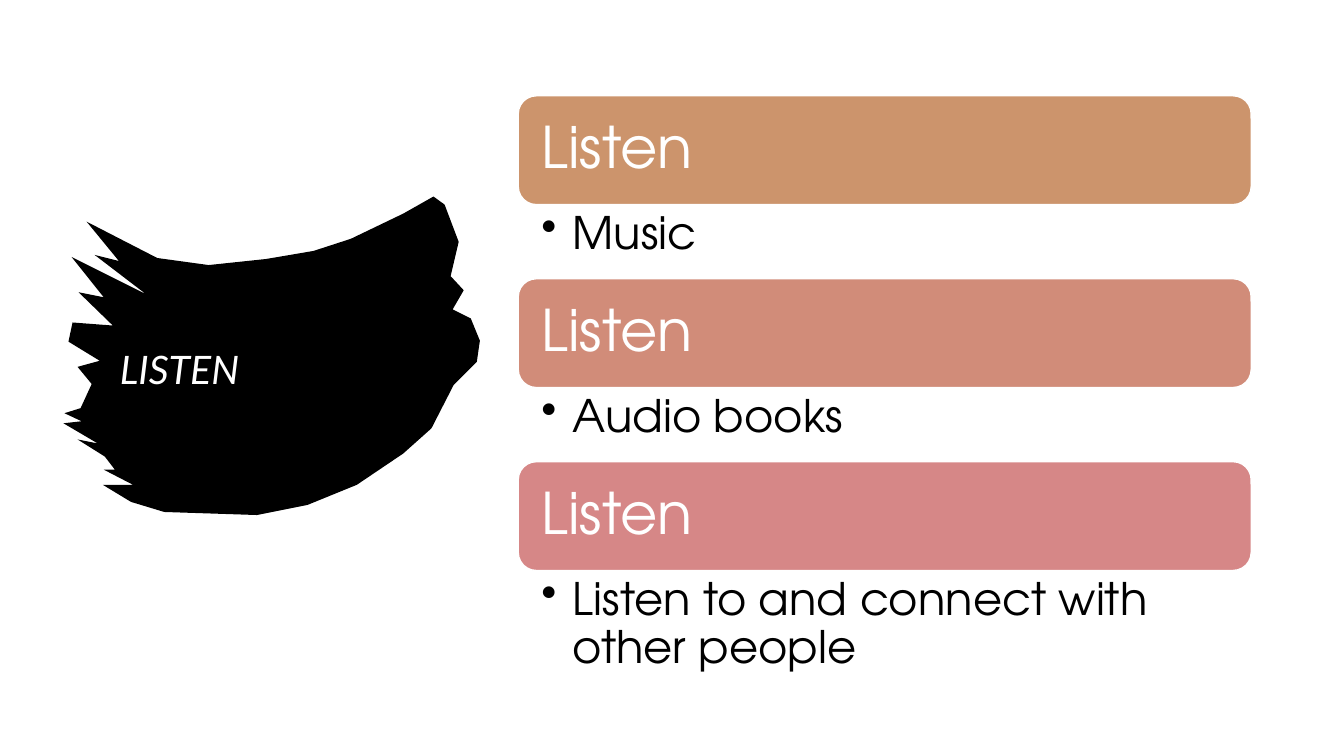
from lxml.etree import SubElement
from pptx import Presentation
from pptx.dml.color import RGBColor
from pptx.enum.shapes import MSO_SHAPE
from pptx.enum.text import MSO_ANCHOR, PP_ALIGN
from pptx.oxml.ns import qn
from pptx.util import Inches, Pt

WHITE = RGBColor(0xFF, 0xFF, 0xFF)
BLACK = RGBColor(0x00, 0x00, 0x00)
TAN = RGBColor(0xCC, 0x94, 0x6C)
CLAY = RGBColor(0xD1, 0x8C, 0x79)
ROSE = RGBColor(0xD6, 0x87, 0x87)

COLS, ROWS = 1333, 750

BRUSH = [
    (430, 195), (441, 203), (455, 240), (447, 274), (460, 288),
    (449, 307), (467, 316), (476, 338), (473, 359), (450, 382),
    (428, 425), (400, 450), (354, 481), (305, 501), (255, 511),
    (163, 508), (130, 498), (102, 481), (132, 481), (103, 466),
    (114, 466), (104, 453), (77, 436), (97, 440), (63, 420),
    (81, 418), (64, 410), (80, 405), (91, 381), (77, 364),
    (99, 358), (68, 339), (72, 320), (112, 323), (78, 290),
    (103, 295), (71, 255), (145, 292), (94, 253), (118, 259),
    (86, 220), (156, 256), (207, 263), (264, 257), (311, 249),
    (348, 237), (400, 212),
]


class SlideBuilder:
    title_font = "Lato"
    list_font = "TeX Gyre Adventor"
    line_spacing = 0.9

    def __init__(self, prs):
        self.col = prs.slide_width / COLS
        self.row = prs.slide_height / ROWS
        self.slide = prs.slides.add_slide(prs.slide_layouts[6])
        fill = self.slide.background.fill
        fill.solid()
        fill.fore_color.rgb = WHITE

    def box(self, x, y, w, h):
        return (round(x * self.col), round(y * self.row),
                round(w * self.col), round(h * self.row))

    def text(self, sp, words, size, color, font, inset=(10, 5, 10, 5),
             anchor=MSO_ANCHOR.MIDDLE, italic=False):
        tf = sp.text_frame
        tf.word_wrap = True
        tf.vertical_anchor = anchor
        (tf.margin_left, tf.margin_top,
         tf.margin_right, tf.margin_bottom) = self.box(*inset)
        p = tf.paragraphs[0]
        p.alignment = PP_ALIGN.LEFT
        p.line_spacing = self.line_spacing
        r = p.add_run()
        r.text = words
        r.font.name = font
        r.font.size = Pt(size)
        r.font.italic = italic
        r.font.color.rgb = color
        return p

    def outline(self, color, points):
        builder = self.slide.shapes.build_freeform(*points[0], scale=self.col)
        builder.add_line_segments(points[1:], close=True)
        sp = builder.convert_to_shape()
        sp.shadow.inherit = False
        sp.fill.solid()
        sp.fill.fore_color.rgb = color
        sp.line.fill.background()

    def title(self, words, *area):
        sp = self.slide.shapes.add_textbox(*self.box(*area))
        self.text(sp, words, 28, WHITE, self.title_font, italic=True)

    def header(self, words, color, *area):
        sp = self.slide.shapes.add_shape(
            MSO_SHAPE.ROUNDED_RECTANGLE, *self.box(*area))
        sp.shadow.inherit = False
        sp.fill.solid()
        sp.fill.fore_color.rgb = color
        sp.line.color.rgb = WHITE
        sp.line.width = Pt(1)
        self.text(sp, words, 41, WHITE, self.list_font, (18, 17, 18, 17))

    def bullet(self, words, *area):
        sp = self.slide.shapes.add_textbox(*self.box(*area))
        p = self.text(sp, words, 32, BLACK, self.list_font,
                      (23, 6, 32, 6), MSO_ANCHOR.TOP)
        indent = round(31 * self.col)
        pPr = p._p.get_or_add_pPr()
        pPr.set("marL", str(indent))
        pPr.set("indent", str(-indent))
        SubElement(pPr, qn("a:buChar")).set("char", "•")


def main():
    prs = Presentation()
    prs.slide_width, prs.slide_height = Inches(13.33), Inches(7.5)
    s = SlideBuilder(prs)
    s.outline(BLACK, BRUSH)
    s.title("LISTEN", 109, 287, 329, 164)

    left, top, width, header_height, pitch = 514, 95, 727, 108, 181.5
    items = [("Music", TAN, 74), ("Audio books", CLAY, 74),
             ("Listen to and connect with other people", ROSE, 107)]
    for i, (words, color, height) in enumerate(items):
        y = top + i * pitch
        s.header("Listen", color, left, y, width, header_height)
        s.bullet(words, left, y + header_height, width, height)
    prs.save("out.pptx")


if __name__ == "__main__":
    main()
